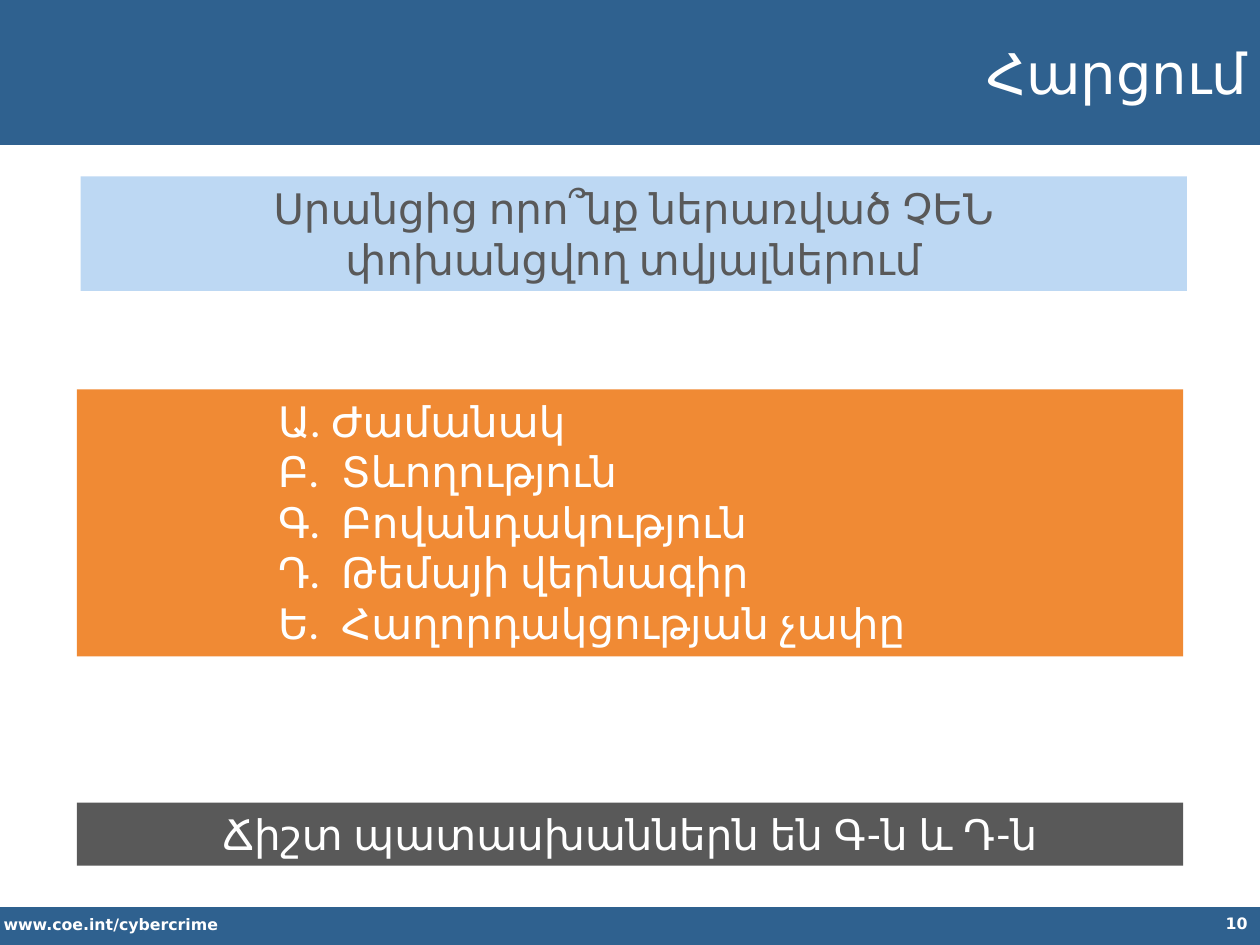
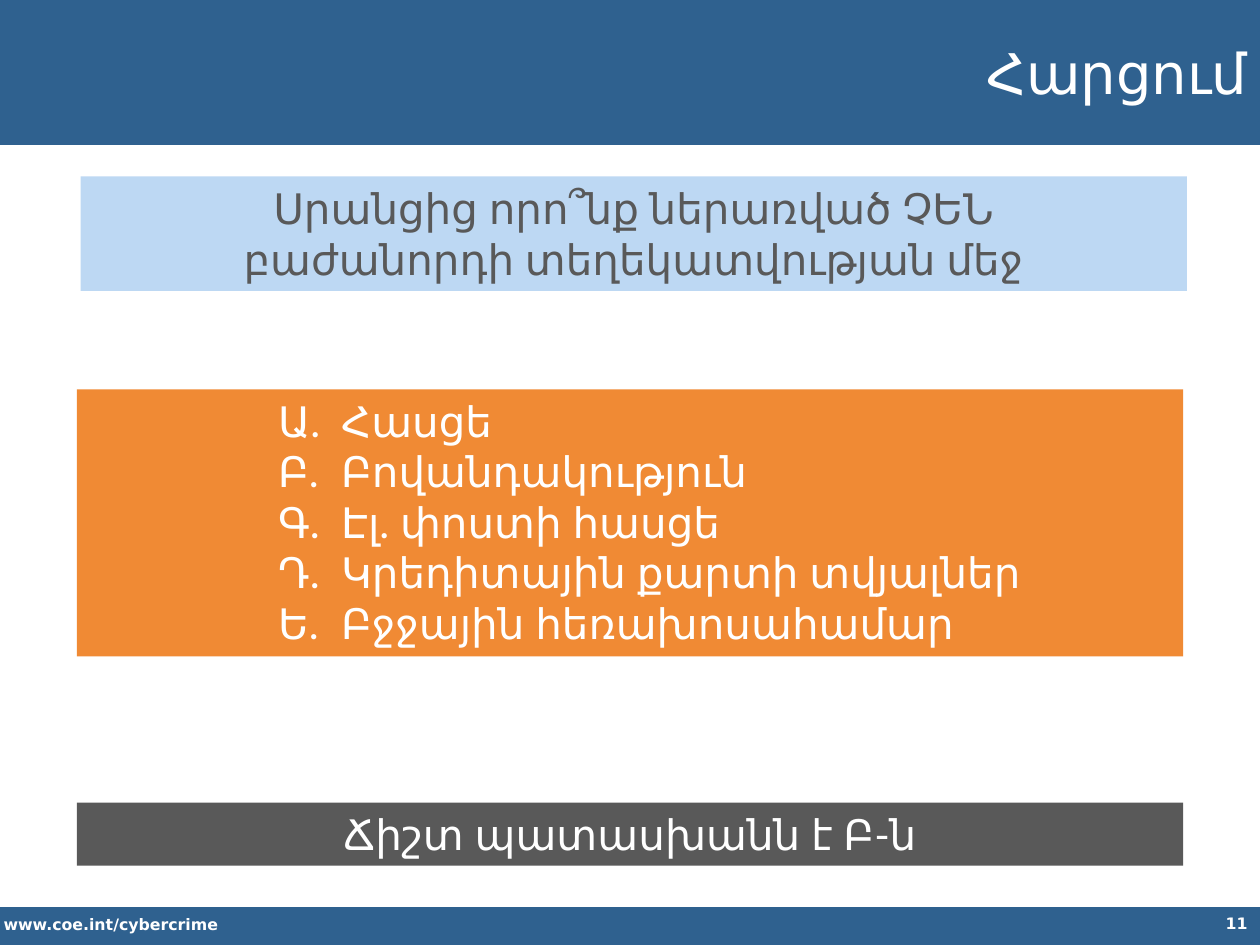
from pptx import Presentation
from pptx.dml.color import RGBColor
from pptx.enum.shapes import MSO_SHAPE
from pptx.enum.text import MSO_ANCHOR, MSO_AUTO_SIZE, PP_ALIGN
from pptx.util import Inches, Pt

RECT = MSO_SHAPE.RECTANGLE
TOP, MIDDLE = MSO_ANCHOR.TOP, MSO_ANCHOR.MIDDLE
NO_FIT = MSO_AUTO_SIZE.NONE
LEFT, CENTER, RIGHT = PP_ALIGN.LEFT, PP_ALIGN.CENTER, PP_ALIGN.RIGHT

BLUE, PALE, ORANGE, GRAY, WHITE = "2F618F", "BDD8F3", "F08A34", "595959", "FFFFFF"
BODY, SMALL = "Lato", "DejaVu Sans"

HEAD = (0, -0.03, 10, 1.18)
FOOT = (0, 7.2, 10, 0.32)
ASK = (0.64, 1.4, 8.78, 0.91)
CHOICE = (0.61, 3.09, 8.78, 2.12)
REPLY = (0.61, 6.37, 8.78, 0.5)

POLLS = [
    (10,
     ["Սրանցից որո՞նք ներառված ՉԵՆ", "փոխանցվող տվյալներում"],
     ["Ա. Ժամանակ", "Բ.\tՏևողություն", "Գ.\tԲովանդակություն",
      "Դ.\tԹեմայի վերնագիր", "Ե.\tՀաղորդակցության չափը"],
     "Ճիշտ պատասխաններն են Գ-ն և Դ-ն"),
    (11,
     ["Սրանցից որո՞նք ներառված ՉԵՆ", "բաժանորդի տեղեկատվության մեջ"],
     ["Ա.\tՀասցե", "Բ.\tԲովանդակություն", "Գ.\tԷլ. փոստի հասցե",
      "Դ.\tԿրեդիտային քարտի տվյալներ", "Ե.\tԲջջային հեռախոսահամար"],
     "Ճիշտ պատասխանն է Բ-ն"),
]


def color(code):
    return RGBColor.from_string(code)


def place(shape, box):
    shape.left, shape.top, shape.width, shape.height = map(Inches, box)


def paint(shape, fill):
    shape.fill.solid()
    shape.fill.fore_color.rgb = color(fill)
    shape.line.fill.background()


def write(shape, lines, size, ink=WHITE, align=CENTER, font=BODY, bold=False, anchor=TOP):
    frame = shape.text_frame
    frame.word_wrap = True
    frame.auto_size = NO_FIT
    frame.vertical_anchor = anchor
    frame.text = "\n".join(lines)
    for par in frame.paragraphs:
        par.alignment = align
        par.font.name = font
        par.font.size = Pt(size)
        par.font.bold = bold
        par.font.color.rgb = color(ink)


def add_band(slide, box, fill):
    band = slide.shapes.add_shape(RECT, *map(Inches, box))
    band.shadow.inherit = False
    paint(band, fill)
    return band


def add_note(slide, box, text, align):
    note = slide.shapes.add_textbox(*map(Inches, box))
    write(note, [text], 9, align=align, font=SMALL, bold=True)


def add_head(slide, box, text):
    left, top, width, height = box
    add_band(slide, box, BLUE)
    title = slide.shapes.title
    place(title, (left + 2.2, top + 0.1, width - 2.2, height - 0.17))
    paint(title, BLUE)
    write(title, [text], 32, align=RIGHT, anchor=MIDDLE)
    tree = title.element.getparent()
    tree.append(title.element)


def add_foot(slide, box, page):
    left, top, width, height = box
    add_band(slide, box, BLUE)
    add_note(slide, (left - 0.07, top + 0.01, 3.52, 0.25), "www.coe.int/cybercrime", LEFT)
    add_note(slide, (left + width - 2.25, top, 2.25, height), str(page), RIGHT)


def add_choice(slide, box, lines):
    panel = add_band(slide, box, ORANGE)
    write(panel, lines, 24, align=LEFT)
    for par in panel.text_frame.paragraphs:
        props = par._p.get_or_add_pPr()
        props.set("marL", str(Inches(2)))
        props.set("indent", str(Inches(-0.5)))


def add_poll(deck, page, ask, choices, reply):
    slide = deck.slides.add_slide(deck.slide_layouts[5])
    add_head(slide, HEAD, "Հարցում")
    add_foot(slide, FOOT, page)
    write(add_band(slide, ASK, PALE), ask, 24, GRAY)
    write(add_band(slide, REPLY, GRAY), [reply], 24)
    add_choice(slide, CHOICE, choices)


def main():
    deck = Presentation()
    deck.slide_width, deck.slide_height = Inches(10), Inches(7.5)
    for poll in POLLS:
        add_poll(deck, *poll)
    deck.save("out.pptx")


if __name__ == "__main__":
    main()
